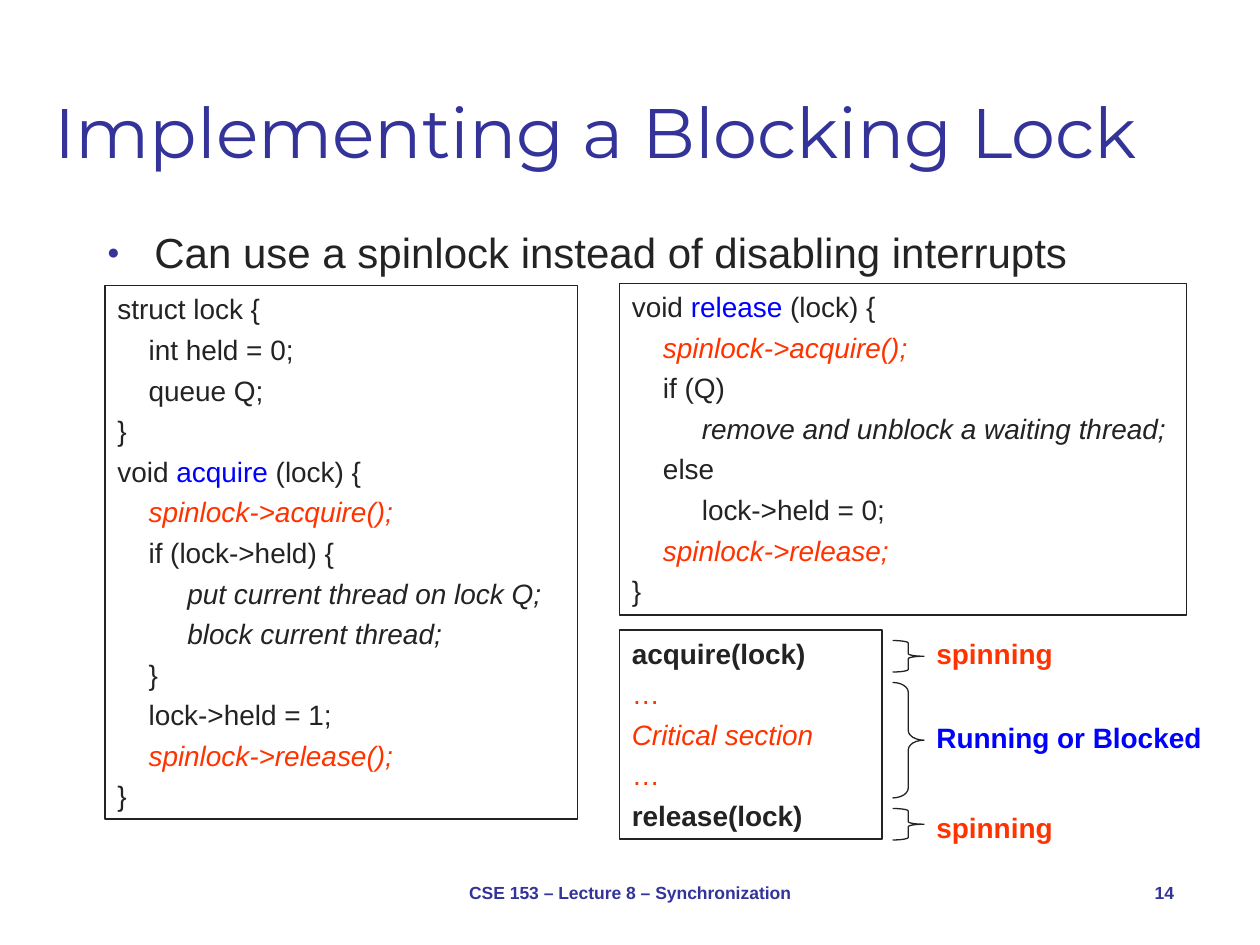
from dataclasses import dataclass

from lxml import etree
from pptx import Presentation
from pptx import util as u
from pptx.dml.color import RGBColor
from pptx.enum import shapes, text
from pptx.oxml.ns import qn

INK = RGBColor(0x23, 0x23, 0x23)
NAVY = RGBColor(0x33, 0x33, 0x99)
BLUE = RGBColor(0x00, 0x00, 0xFF)
RED = RGBColor(0xFF, 0x33, 0x00)

CODE_SIZE = 16
LINE_GAP = 4
INDENTS = (0, 17.8, 40)  # left margin of each nesting level
RIGHT_COLUMN = 354
LABEL_LEFT = 528


@dataclass(frozen=True)
class Span:
    text: str
    color: RGBColor = INK
    bold: bool = False
    italic: bool = False


@dataclass(frozen=True)
class Line:
    level: int
    spans: tuple[Span, ...]


@dataclass(frozen=True)
class Area:
    left: float
    top: float
    width: float
    height: float

    def lengths(self) -> tuple:
        return tuple(u.Pt(n) for n in (self.left, self.top, self.width, self.height))


@dataclass(frozen=True)
class CodeBox:
    area: Area
    lines: tuple[Line, ...]


@dataclass(frozen=True)
class Phase:
    label: Span
    label_top: float
    brace: Area
    curve: float


def code(level: int, content: str, **style) -> Line:
    return Line(level, (Span(content, **style),))


def spin(call: str) -> Line:
    return code(1, call, color=RED, italic=True)


def header(name: str) -> Line:
    return Line(0, (Span("void "), Span(name, BLUE), Span(" (lock) {")))


CODE_BOXES = (
    CodeBox(Area(RIGHT_COLUMN, 162, 324, 189.5), (
        header("release"),
        spin("spinlock->acquire();"),
        code(1, "if (Q)"),
        code(2, "remove and unblock a waiting thread;", italic=True),
        code(1, "else"),
        code(2, "lock->held = 0;"),
        spin("spinlock->release;"),
        code(0, "}"),
    )),
    CodeBox(Area(60, 163.3, 270, 304.7), (
        code(0, "struct lock {"),
        code(1, "int held = 0;"),
        code(1, "queue Q;"),
        code(0, "}"),
        header("acquire"),
        spin("spinlock->acquire();"),
        code(1, "if (lock->held) {"),
        code(2, "put current thread on lock Q;", italic=True),
        code(2, "block current thread;", italic=True),
        code(1, "}"),
        code(1, "lock->held = 1;"),
        spin("spinlock->release();"),
        code(0, "}"),
    )),
    CodeBox(Area(RIGHT_COLUMN, 360, 150, 119.5), (
        code(0, "acquire(lock)", bold=True),
        code(0, "…", color=RED),
        code(0, "Critical section", color=RED, italic=True),
        code(0, "…", color=RED),
        code(0, "release(lock)", bold=True),
    )),
)

PHASES = (
    Phase(Span("spinning", RED, bold=True), 360, Area(510, 366, 18, 18), 0.08),
    Phase(Span("Running or Blocked", BLUE, bold=True), 408, Area(510, 390, 18, 66), 0.31),
    Phase(Span("spinning", RED, bold=True), 459.5, Area(510, 462, 18, 18), 0.08),
)


def write(para, content: str, *, size: float = CODE_SIZE, font: str = "Arial",
          color: RGBColor = INK, bold: bool = False, italic: bool = False,
          align=text.PP_ALIGN.LEFT) -> None:
    para.alignment = align
    span = para.add_run()
    span.text = content
    span.font.name = font
    span.font.size = u.Pt(size)
    span.font.color.rgb = color
    span.font.bold = bold
    span.font.italic = italic


def place(shape, area: Area) -> None:
    shape.left, shape.top, shape.width, shape.height = area.lengths()


def set_bullet(para, hanging: float) -> None:
    properties = para._p.get_or_add_pPr()
    properties.set("marL", str(u.Pt(hanging)))
    properties.set("indent", str(-u.Pt(hanging)))
    color = etree.SubElement(properties, qn("a:buClr"))
    etree.SubElement(color, qn("a:srgbClr"), val=str(NAVY))
    etree.SubElement(properties, qn("a:buSzPct"), val="50000")
    etree.SubElement(properties, qn("a:buFont"), typeface="Arial")
    etree.SubElement(properties, qn("a:buChar"), char="●")


def add_outline(page, kind, area: Area):
    shape = page.shapes.add_shape(kind, *area.lengths())
    shape.shadow.inherit = False
    shape.fill.background()
    shape.line.color.rgb = INK
    shape.line.width = u.Pt(0.75)
    return shape


def add_code_box(page, box: CodeBox) -> None:
    frame = add_outline(page, shapes.MSO_SHAPE.RECTANGLE, box.area).text_frame
    frame.word_wrap = True
    frame.vertical_anchor = text.MSO_ANCHOR.TOP
    for number, line in enumerate(box.lines):
        para = frame.add_paragraph() if number else frame.paragraphs[0]
        para.space_before = u.Pt(LINE_GAP if number else 0)
        para._p.get_or_add_pPr().set("marL", str(u.Pt(INDENTS[line.level])))
        for span in line.spans:
            write(para, span.text, color=span.color, bold=span.bold, italic=span.italic)


def add_label(page, area: Area, content: str, anchor=text.MSO_ANCHOR.TOP, **style) -> None:
    frame = page.shapes.add_textbox(*area.lengths()).text_frame
    frame.word_wrap = True
    frame.vertical_anchor = anchor
    write(frame.paragraphs[0], content, **style)


def add_phase(page, phase: Phase) -> None:
    brace = add_outline(page, shapes.MSO_SHAPE.RIGHT_BRACE, phase.brace)
    brace.adjustments[0] = phase.curve
    add_label(page, Area(LABEL_LEFT, phase.label_top, 192, 26.5), phase.label.text,
              color=phase.label.color, bold=phase.label.bold)


def main() -> None:
    deck = Presentation()
    deck.slide_width, deck.slide_height = u.Pt(720), u.Pt(540)
    page = deck.slides.add_slide(deck.slide_layouts[1])

    # Title and bullet
    title, body = page.shapes.title, page.placeholders[1]
    place(title, Area(24, 12, 696, 90))
    title.text_frame.vertical_anchor = text.MSO_ANCHOR.BOTTOM
    write(title.text_frame.paragraphs[0], "Implementing a Blocking Lock",
          size=40, font="Montserrat", color=NAVY)
    place(body, Area(54, 126, 624, 348))
    bullet = body.text_frame.paragraphs[0]
    bullet.space_before = u.Pt(0)
    write(bullet, "Can use a spinlock instead of disabling interrupts", size=24)
    set_bullet(bullet, 27)

    # Code and execution phases
    for box in CODE_BOXES:
        add_code_box(page, box)
    for phase in PHASES:
        add_phase(page, phase)

    # Footer
    footer = dict(anchor=text.MSO_ANCHOR.MIDDLE, size=10, color=NAVY, bold=True)
    add_label(page, Area(246, 492, 228, 36), "CSE 153 – Lecture 8 – Synchronization",
              align=text.PP_ALIGN.CENTER, **footer)
    add_label(page, Area(630, 492, 48, 36), "14", align=text.PP_ALIGN.RIGHT, **footer)

    deck.save("out.pptx")


if __name__ == "__main__":
    main()
